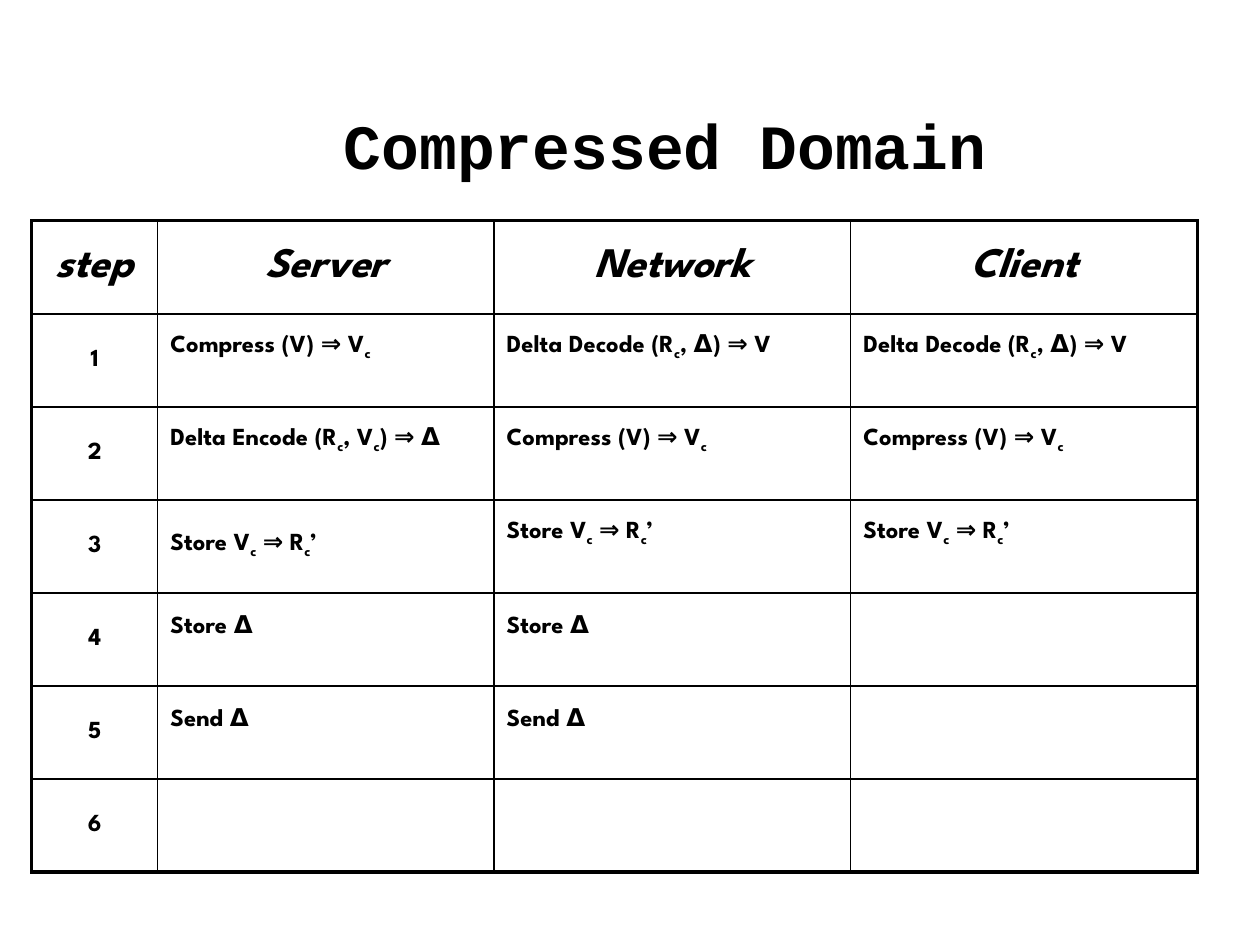
from dataclasses import dataclass

from lxml import etree
from pptx import Presentation
from pptx.dml.color import RGBColor
from pptx.enum.text import MSO_ANCHOR, MSO_AUTO_SIZE, PP_ALIGN
from pptx.oxml.ns import qn
from pptx.util import Cm, Pt

CENTER, LEFT = PP_ALIGN.CENTER, PP_ALIGN.LEFT
MIDDLE = MSO_ANCHOR.MIDDLE
TITLE_ONLY = 5


@dataclass(frozen=True)
class Theme:
    ink: str = "000000"
    title_font: str = "Courier New"
    table_font: str = "League Spartan"
    title_size: int = 36
    header_size: int = 24
    body_size: int = 14
    outer_line: float = 2.25
    inner_line: float = 1


THEME = Theme()
SUBSCRIPT = "_c"
COLUMN_WIDTHS = (2.54, 6.78, 7.19, 6.99)
HEADERS = ("step", "Server", "Network", "Client")
STORE_REFERENCE = "Store V_c ⇒ R_c’"
DECODE = "Delta Decode (R_c, Δ) ⇒ V"
COMPRESS = "Compress (V) ⇒ V_c"
STEPS = (
    (COMPRESS, DECODE, DECODE),
    ("Delta Encode (R_c, V_c) ⇒ Δ", COMPRESS, COMPRESS),
    (STORE_REFERENCE, STORE_REFERENCE, STORE_REFERENCE),
    ("Store Δ", "Store Δ", ""),
    ("Send Δ", "Send Δ", ""),
    ("", "", ""),
)
CENTERED_STEP = (3, 1)  # the only step text without the raised position
RAISED_BOTTOM = 0.6


def add_run(paragraph, text, font_name, size, italic=False, subscript=False):
    run = paragraph.add_run()
    run.text = text
    font = run.font
    font.name, font.size = font_name, Pt(size)
    font.bold, font.italic = True, italic
    font.color.rgb = RGBColor.from_string(THEME.ink)
    if subscript:
        run._r.get_or_add_rPr().set("baseline", "-25000")


def write_cell(cell, text, size, alignment=LEFT, italic=False):
    """Write text in which each "_c" stands for a subscript c."""
    paragraph = cell.text_frame.paragraphs[0]
    paragraph.alignment = alignment
    for index, piece in enumerate(text.split(SUBSCRIPT)):
        if index:
            add_run(paragraph, "c", THEME.table_font, size, italic, subscript=True)
        if piece:
            add_run(paragraph, piece, THEME.table_font, size, italic)


def set_borders(cell, outer_sides):
    properties = cell._tc.get_or_add_tcPr()
    for index, side in enumerate("LRTB"):
        width = THEME.outer_line if side in outer_sides else THEME.inner_line
        line = etree.Element(qn(f"a:ln{side}"), w=str(Pt(width)))
        fill = etree.SubElement(line, qn("a:solidFill"))
        etree.SubElement(fill, qn("a:srgbClr"), val=THEME.ink)
        properties.insert(index, line)


def place_title(slide, left, top, width, height):
    title = slide.shapes.title
    title.left, title.top = Cm(left), Cm(top)
    title.width, title.height = Cm(width), Cm(height)
    frame = title.text_frame
    frame.auto_size = MSO_AUTO_SIZE.NONE
    frame.vertical_anchor = MIDDLE
    paragraph = frame.paragraphs[0]
    paragraph.alignment = CENTER
    add_run(paragraph, "Compressed Domain", THEME.title_font, THEME.title_size)


def place_steps_table(slide, left, top, width, height):
    rows = [HEADERS] + [(str(number), *step) for number, step in enumerate(STEPS, 1)]
    last_row, last_column = len(rows) - 1, len(HEADERS) - 1
    table = slide.shapes.add_table(
        len(rows), len(HEADERS), Cm(left), Cm(top), Cm(width), Cm(height)
    ).table
    table.first_row = table.horz_banding = False
    for column, share in zip(table.columns, COLUMN_WIDTHS):
        column.width = Cm(width * share / sum(COLUMN_WIDTHS))

    for row_index, row in enumerate(rows):
        for column_index, text in enumerate(row):
            cell = table.cell(row_index, column_index)
            cell.fill.background()
            cell.vertical_anchor = MIDDLE
            edges = {"L": column_index == 0, "R": column_index == last_column,
                     "T": row_index == 0, "B": row_index == last_row}
            set_borders(cell, [side for side, outer in edges.items() if outer])
            if row_index == 0:
                write_cell(cell, text, THEME.header_size, CENTER, italic=True)
            elif column_index == 0:
                write_cell(cell, text, THEME.body_size, CENTER)
            elif text:
                write_cell(cell, text, THEME.body_size)
                if (row_index, column_index) != CENTERED_STEP:
                    cell.margin_bottom = Cm(RAISED_BOTTOM)


def main():
    presentation = Presentation()
    presentation.slide_width, presentation.slide_height = Cm(25.4), Cm(19.05)
    slide = presentation.slides.add_slide(presentation.slide_layouts[TITLE_ONLY])
    place_title(slide, 3.56, 1.9, 19.69, 2.03)
    place_steps_table(slide, 0.64, 4.45, 23.5, 13.13)
    presentation.save("out.pptx")


if __name__ == "__main__":
    main()
